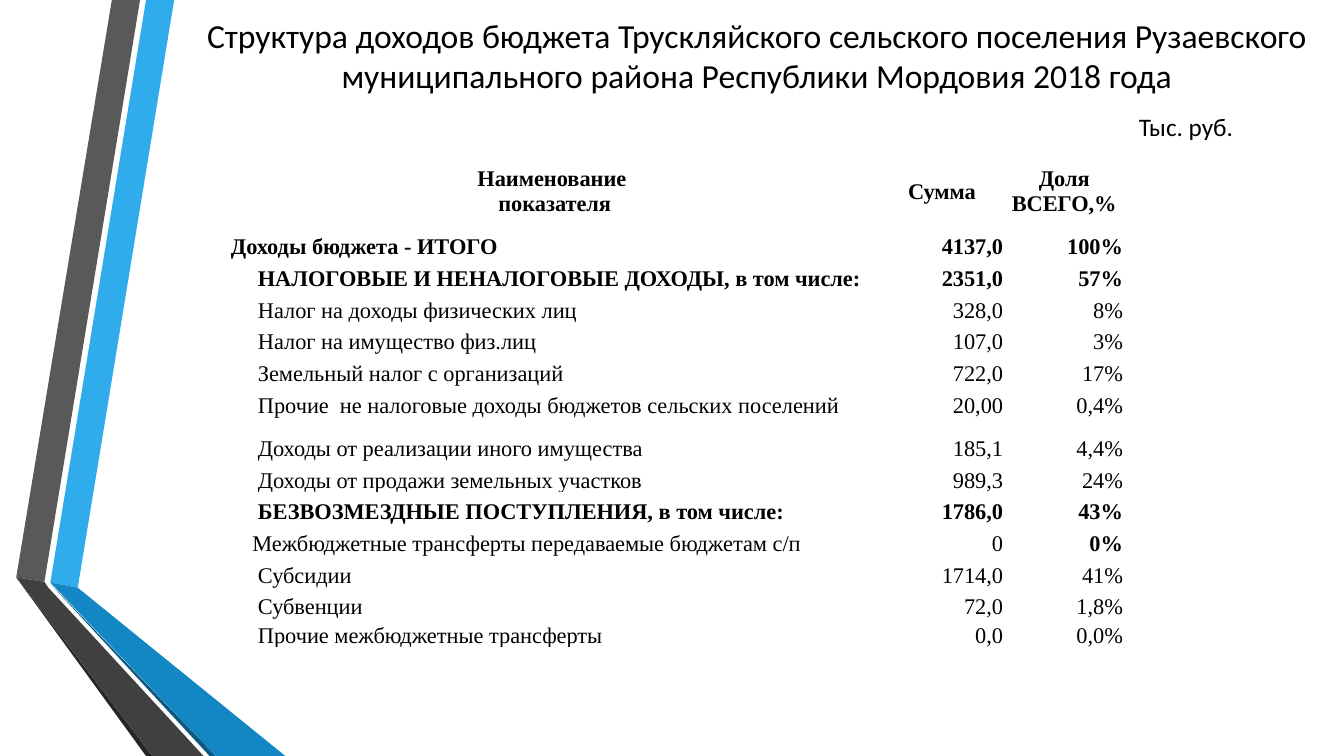
import pptx
import pptx.util
import pptx.dml.color
import pptx.enum.text

Cm, Pt = pptx.util.Cm, pptx.util.Pt
ALIGN = pptx.enum.text.PP_ALIGN
ANCHOR = pptx.enum.text.MSO_ANCHOR
COLORS = {
    "blue": "30ACEC", "gray": "595959", "black": "000000", "coal": "262626",
    "navy": "0C5A82", "deep": "1287C3", "dark": "404040",
}


def color(name):
    return pptx.dml.color.RGBColor.from_string(COLORS[name])


def style(par, face, size, align, bold=False):
    """Set the font and alignment of a whole paragraph."""
    par.alignment = align
    par.font.name = face
    par.font.size = Pt(size)
    par.font.bold = bold
    par.font.color.rgb = color("black")


deck = pptx.Presentation()
deck.slide_width, deck.slide_height = Cm(33.87), Cm(19.05)
slide = deck.slides.add_slide(deck.slide_layouts[6])

# Folded ribbons on the left, corners in centimetres
ribbons = [
    ("blue", [(1.27, 14.68), (1.96, 14.81), (4.39, 0), (3.68, 0)]),
    ("gray", [(3.53, 0), (2.82, 0), (0.41, 14.55), (1.12, 14.66)]),
    ("coal", [(0.41, 14.55), (3.68, 19.05), (3.84, 19.05)]),
    ("navy", [(1.27, 14.71), (5.28, 19.05), (5.44, 19.05)]),
    ("deep", [(1.27, 14.68), (5.44, 19.05), (7.19, 19.05), (1.96, 14.81)]),
    ("dark", [(5.13, 19.05), (1.22, 14.81), (1.12, 14.66), (0.41, 14.55),
              (3.84, 19.05)]),
]
for name, points in ribbons:
    first, *rest = [(Cm(x), Cm(y)) for x, y in points]
    pen = slide.shapes.build_freeform(*first)
    pen.add_line_segments(rest)
    ribbon = pen.convert_to_shape()
    ribbon.shadow.inherit = False
    ribbon.fill.solid()
    ribbon.fill.fore_color.rgb = color(name)
    ribbon.line.fill.background()

# Title and unit
labels = [
    ("Структура доходов бюджета Трускляйского сельского поселения Рузаевского "
     "муниципального района Республики Мордовия 2018 года",
     (4.8, 0.33, 28.55, 2.13), 24, ALIGN.CENTER, ANCHOR.MIDDLE, True),
    ("Тыс. руб.", (28.45, 2.69, 2.97, 1.02), 18, ALIGN.LEFT, ANCHOR.TOP, False),
]
for text, place, size, align, anchor, wrap in labels:
    frame = slide.shapes.add_textbox(*map(Cm, place)).text_frame
    frame.word_wrap = wrap
    frame.vertical_anchor = anchor
    frame.text = text
    style(frame.paragraphs[0], "Calibri", size, align)

# Income table: left margin, bold columns, cell texts
ALL, NONE = (0, 1, 2), ()
rows = [
    (0.03, ALL, "Наименование \vпоказателя", "Сумма", "Доля ВСЕГО,%"),
    (0.03, ALL, "Доходы бюджета - ИТОГО", "4137,0", "100%"),
    (0.71, ALL, "НАЛОГОВЫЕ И НЕНАЛОГОВЫЕ ДОХОДЫ, в том числе:", "2351,0", "57%"),
    (0.71, NONE, "Налог на доходы физических лиц", "328,0", "8%"),
    (0.71, NONE, "Налог на имущество физ.лиц", "107,0", "3%"),
    (0.71, NONE, "Земельный налог с организаций", "722,0", "17%"),
    (0.71, NONE, "Прочие  не налоговые доходы бюджетов сельских поселений",
     "20,00", "0,4%"),
    (0.71, NONE, "Доходы от реализации иного имущества", "185,1", "4,4%"),
    (0.71, NONE, "Доходы от продажи земельных участков", "989,3", "24%"),
    (0.71, ALL, "БЕЗВОЗМЕЗДНЫЕ ПОСТУПЛЕНИЯ, в том числе:", "1786,0", "43%"),
    (0.57, (2,), "Межбюджетные трансферты передаваемые бюджетам с/п", "0", "0%"),
    (0.71, NONE, "Субсидии", "1714,0", "41%"),
    (0.71, NONE, "Субвенции", "72,0", "1,8%"),
    (0.71, NONE, "Прочие межбюджетные трансферты", "0,0", "0,0%"),
]
widths = [16.38, 3.14, 3.02]
heights = [1.85] + [0.8] * 6 + [1.08] + [0.8] * 5 + [0.64]
table = slide.shapes.add_table(
    len(rows), len(widths), Cm(5.79), Cm(3.89),
    Cm(sum(widths)), Cm(sum(heights))).table
table.first_row = table.horz_banding = False
for column, width in zip(table.columns, widths):
    column.width = Cm(width)
for i, (margin, bold, *texts) in enumerate(rows):
    table.rows[i].height = Cm(heights[i])
    for j, text in enumerate(texts):
        cell = table.cell(i, j)
        cell.fill.background()
        cell.margin_left = Cm(margin if j == 0 else 0.03)
        cell.margin_right = cell.margin_top = Cm(0.03)
        cell.margin_bottom = 0
        cell.vertical_anchor = ANCHOR.BOTTOM if i else ANCHOR.MIDDLE
        cell.text = text
        align = ALIGN.CENTER if i == 0 else ALIGN.RIGHT if j else ALIGN.LEFT
        style(cell.text_frame.paragraphs[0], "Times New Roman", 16, align, j in bold)

deck.save("out.pptx")
